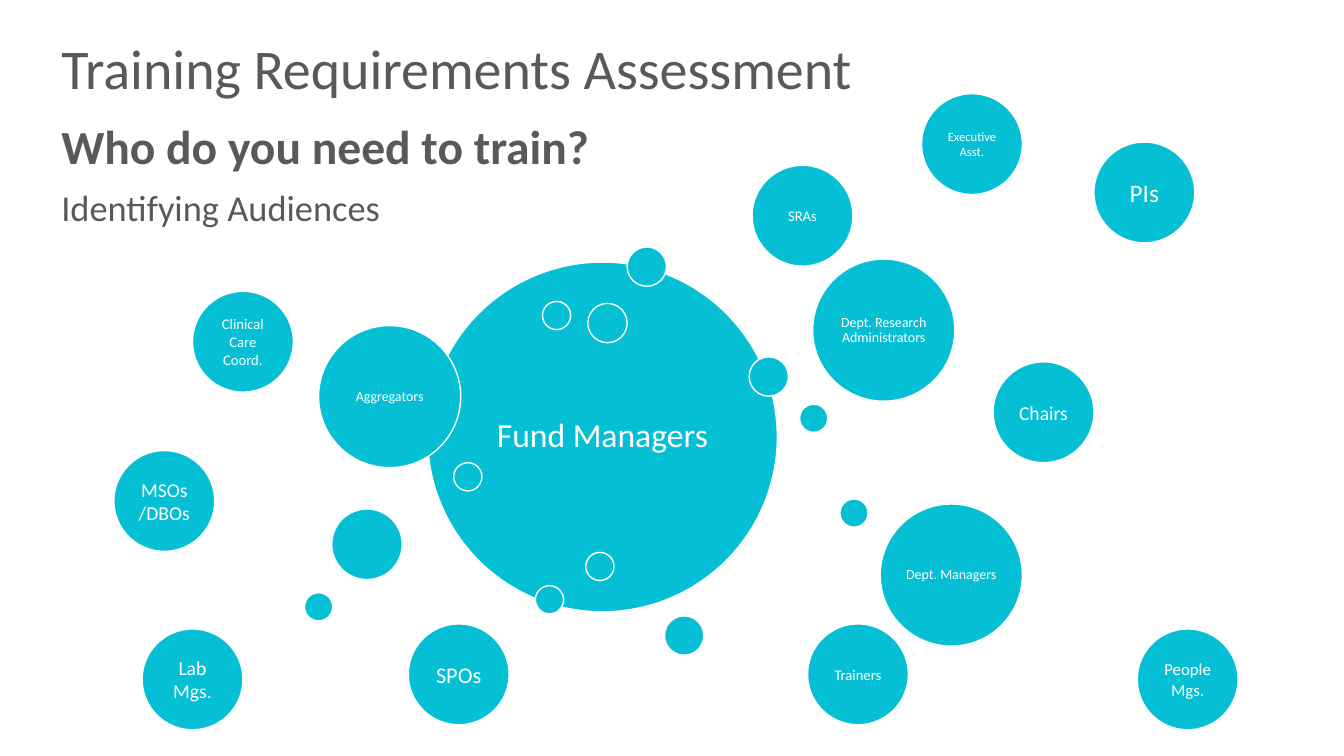
"""Build the training audience slide: three headings and a field of bubbles around a hub."""
from dataclasses import dataclass

from pptx import Presentation
from pptx.dml.color import RGBColor
from pptx.enum.shapes import MSO_SHAPE as Shape
from pptx.enum.text import MSO_ANCHOR as Anchor, PP_ALIGN as Align
from pptx.util import Inches, Pt

COLUMNS, ROWS = 133.3, 75
CELL = Inches(0.1)

# Column, row, width and height in grid cells, then size role and weight.
HEADINGS = [
    ("Training Requirements Assessment", (5.1, 3.6, 123.5, 8.2), "title", False),
    ("Who do you need to train?", (5.1, 11.7, 90.7, 6.9), "question", True),
    ("Identifying Audiences", (5.1, 18.4, 123.7, 48.9), "topic", False),
]

# Each family: diameter, text inset, line spacing, then (label, size, column, row).
FAMILIES = [
    (34.7, 1, 0.9, [("Fund Managers", 24, 42.4, 26)]),
    (14.1, 0.4, 0.9, [
        ("Aggregators", 10, 31.6, 32.3),
        ("Dept. Research Administrators", 10, 80.6, 25.7),
        ("Dept. Managers", 10, 87.3, 50),
    ]),
    (10, 1, 1.0, [
        ("PIs", 18, 108.5, 14.1),
        ("Chairs", 14, 98.5, 35.9),
        ("MSOs/DBOs", 14, 11.3, 44.7),
        ("Clinical Care Coord.", 10.5, 19.1, 28.9),
        ("SRAs", 10.5, 74.6, 16.4),
        ("SPOs", 16, 40.5, 61.9),
        ("Trainers", 10.5, 80.1, 61.9),
        ("Lab Mgs.", 14, 14.1, 62.4),
        ("Executive Asst.", 9, 91.4, 9.3),
        ("People Mgs.", 12, 112.8, 62.4),
    ]),
]

# Diameter of the unlabelled dots, with their columns and rows.
DOTS = {
    7: [(32.9, 50.5)],
    3.9: [(62.2, 24.5), (65.9, 61.1), (58.3, 30.1), (74.3, 35.4)],
    2.8: [(53.1, 58.1), (79.3, 40.1), (53.8, 29.9), (45, 45.9),
          (30.2, 58.8), (58.1, 54.8), (83.3, 49.5)],
}


@dataclass(frozen=True)
class Theme:
    font: str = "Calibri"
    ink: RGBColor = RGBColor(0x58, 0x59, 0x58)
    bubble: RGBColor = RGBColor(0x05, 0xBF, 0xD5)
    white: RGBColor = RGBColor(0xFF, 0xFF, 0xFF)
    outline: float = 1
    title: float = 40
    question: float = 34
    topic: float = 26


THEME = Theme()


def cells(count):
    return round(count * CELL)


def write(frame, text, size, color, spacing, bold=False):
    frame.word_wrap = True
    para = frame.paragraphs[0]
    para.line_spacing = spacing
    span = para.add_run()
    span.text = text
    span.font.name = THEME.font
    span.font.size = Pt(size)
    span.font.bold = bold
    span.font.color.rgb = color
    return para


def add_heading(page, text, area, role, bold):
    box = page.shapes.add_textbox(*map(cells, area))
    write(box.text_frame, text, getattr(THEME, role), THEME.ink, 0.9, bold)


def add_circle(page, column, row, diameter):
    circle = page.shapes.add_shape(Shape.OVAL, *map(cells, (column, row, diameter, diameter)))
    circle.shadow.inherit = False
    circle.fill.solid()
    circle.fill.fore_color.rgb = THEME.bubble
    circle.line.color.rgb = THEME.white
    circle.line.width = Pt(THEME.outline)
    return circle


def add_audience(page, diameter, inset, spacing, label, size, column, row):
    frame = add_circle(page, column, row, diameter).text_frame
    frame.vertical_anchor = Anchor.MIDDLE
    frame.margin_left = frame.margin_right = cells(inset)
    frame.margin_top = frame.margin_bottom = cells(inset / 2)
    write(frame, label, size, THEME.white, spacing).alignment = Align.CENTER


def main():
    deck = Presentation()
    deck.slide_width, deck.slide_height = cells(COLUMNS), cells(ROWS)
    page = deck.slides.add_slide(deck.slide_layouts[6])
    for heading in HEADINGS:
        add_heading(page, *heading)
    for diameter, inset, spacing, audiences in FAMILIES:
        for audience in audiences:
            add_audience(page, diameter, inset, spacing, *audience)
    for diameter, places in DOTS.items():
        for column, row in places:
            add_circle(page, column, row, diameter)
    deck.save("out.pptx")


if __name__ == "__main__":
    main()
